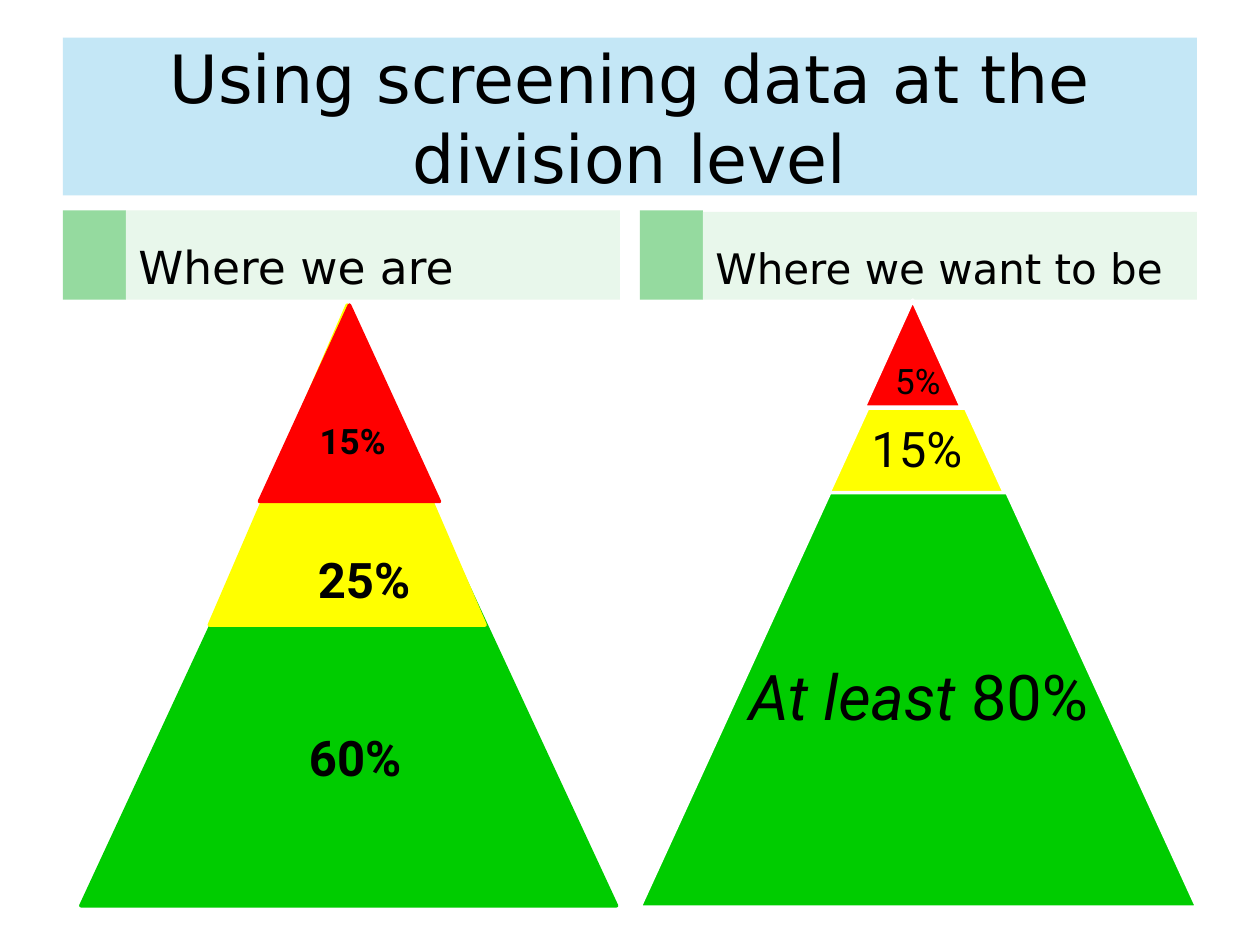
from lxml import etree
from pptx import Presentation
from pptx.dml.color import RGBColor
from pptx.enum.shapes import MSO_SHAPE
from pptx.enum.text import MSO_ANCHOR, PP_ALIGN
from pptx.oxml.ns import qn
from pptx.util import Cm, Pt

RECTANGLE, TRIANGLE, TRAPEZOID = (
    MSO_SHAPE.RECTANGLE, MSO_SHAPE.ISOSCELES_TRIANGLE, MSO_SHAPE.TRAPEZOID)
TOP, MIDDLE, BOTTOM = MSO_ANCHOR.TOP, MSO_ANCHOR.MIDDLE, MSO_ANCHOR.BOTTOM
LEFT, CENTER = PP_ALIGN.LEFT, PP_ALIGN.CENTER

BLACK = RGBColor(0x00, 0x00, 0x00)
WHITE = RGBColor(0xFF, 0xFF, 0xFF)
SKY = RGBColor(0xA9, 0xDC, 0xF2)
MINT = RGBColor(0x95, 0xDA, 0x9F)
PALE_MINT = RGBColor(0xE8, 0xF7, 0xEB)
GREEN = RGBColor(0x00, 0xCC, 0x00)
YELLOW = RGBColor(0xFF, 0xFF, 0x00)
RED = RGBColor(0xFF, 0x00, 0x00)
HEADING_FONT, FIGURE_FONT = "DejaVu Sans", "Roboto"


def add_block(shapes, kind, box, fill, outline=None):
    block = shapes.add_shape(kind, *map(Cm, box))
    block.shadow.inherit = False
    block.fill.solid()
    block.fill.fore_color.rgb = fill
    if outline is None:
        block.line.fill.background()
    else:
        block.line.color.rgb = outline
        block.line.width = Pt(2)
    return block


def write(holder, text, size=20, font=FIGURE_FONT, bold=False, italic_lead="",
          lead_size=None, align=CENTER, anchor=TOP, inset=(0.25, 0.13), spacing=1.0):
    frame = holder.text_frame
    frame.word_wrap = True
    frame.vertical_anchor = anchor
    frame.margin_left = frame.margin_right = Cm(inset[0])
    frame.margin_top = frame.margin_bottom = Cm(inset[1])
    paragraph = frame.paragraphs[0]
    paragraph.alignment = align
    paragraph.line_spacing = spacing
    for part, italic in ((italic_lead, True), (text, False)):
        if part:
            run = paragraph.add_run()
            run.text = part
            run.font.name = font
            run.font.size = Pt(lead_size or size) if italic else Pt(size)
            run.font.bold = bold
            run.font.italic = italic
            run.font.color.rgb = BLACK


deck = Presentation()
deck.slide_width, deck.slide_height = Cm(25.4), Cm(19.05)
slide = deck.slides.add_slide(deck.slide_layouts[6])

# Title band, partly transparent
title = add_block(slide.shapes, RECTANGLE, (1.27, 0.76, 22.86, 3.18), SKY)
title_color = title.fill._xPr.find(qn("a:solidFill"))[0]
etree.SubElement(title_color, qn("a:alpha"), val="68000")
write(title, "Using screening data at the division level", size=38,
      font=HEADING_FONT, anchor=MIDDLE)

# Column headings with their darker tabs
for left, top, heading, size in ((1.27, 4.24, "Where we are", 26),
                                 (12.9, 4.27, "Where we want to be", 24)):
    add_block(slide.shapes, RECTANGLE, (left, 4.24, 1.27, 1.8), MINT)
    band = add_block(slide.shapes, RECTANGLE,
                     (left + 1.27, top, 9.96, 6.04 - top), PALE_MINT)
    write(band, heading, size=size, font=HEADING_FONT, align=LEFT, anchor=BOTTOM)

# Current pyramid: overlapping triangles, then their shares
current = slide.shapes.add_group_shape().shapes
for box, color in (((1.63, 6.63, 10.8, 11.63), GREEN),
                   ((4.22, 6.15, 5.56, 6.45), YELLOW),
                   ((5.23, 6.15, 3.63, 3.96), RED)):
    add_block(current, TRIANGLE, box, color, outline=color)
for left, top, height, share, size in ((5.0, 8.33, 1.09, "15%", 20),
                                       (5.23, 10.95, 1.42, "25%", 28),
                                       (5.05, 14.53, 1.42, "60%", 28)):
    label = current.add_textbox(Cm(left), Cm(top), Cm(4.22), Cm(height))
    write(label, share, size=size, bold=True)

# Target pyramid: stacked tiers, each with a narrower label
target = slide.shapes.add_group_shape().shapes
tiers = (
    ((17.42, 6.05, 1.96, 2.16), 0.5, RED, 1.96, 0.08,
     dict(text="5%", size=20, italic_lead=" ", lead_size=24, anchor=BOTTOM)),
    ((16.69, 8.23, 3.58, 1.75), 0.458, YELLOW, 2.31, 0.1,
     dict(text="15%", size=28, anchor=MIDDLE)),
    ((12.9, 9.93, 11.23, 8.36), 0.458, GREEN, 7.29, 0.15,
     dict(text="80%", size=36, italic_lead="At least ", anchor=MIDDLE)),
)
for box, slant, color, label_width, margin, wording in tiers:
    tier = add_block(target, TRAPEZOID, box, color, outline=WHITE)
    tier.adjustments[0] = slant
    left, top, width, height = box
    label = target.add_textbox(Cm(left + (width - label_width) / 2), Cm(top),
                               Cm(label_width), Cm(height))
    write(label, inset=(margin, margin), spacing=0.9, **wording)

deck.save("out.pptx")
